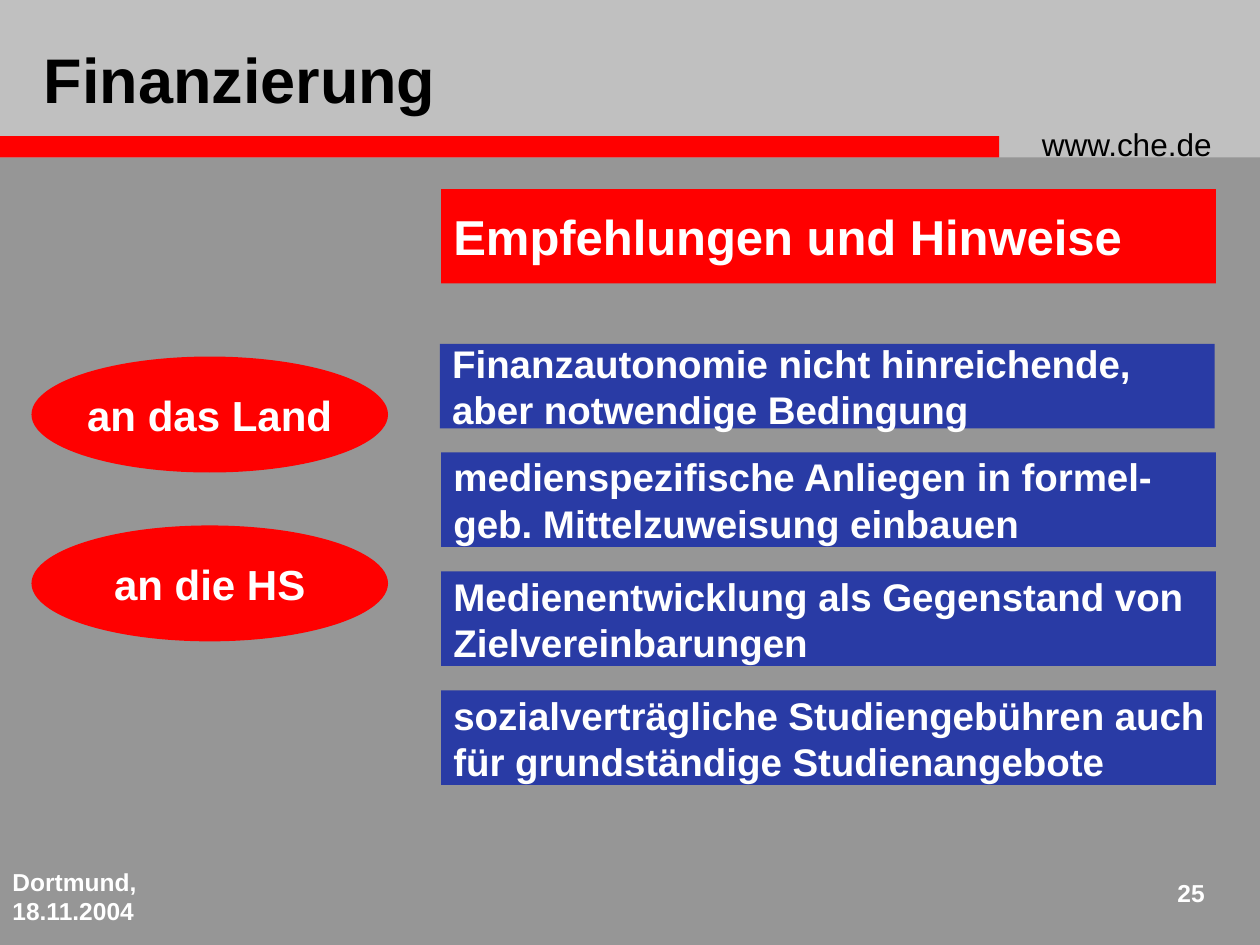
"""Build the slide on funding recommendations to the state and the universities."""
from pptx import Presentation
from pptx.dml.color import RGBColor
from pptx.enum.shapes import MSO_SHAPE
from pptx.enum.text import MSO_ANCHOR, PP_ALIGN
from pptx.util import Inches, Pt

COLORS = {"background": "969696", "band": "C0C0C0", "red": "FF0000",
          "blue": "293BA5", "white": "FFFFFF", "black": "000000"}

HEADING = "Empfehlungen und Hinweise"
ADDRESSEES = ["an das Land", "an die HS"]
RECOMMENDATIONS = [
    ("Finanzautonomie nicht hinreichende,", "aber notwendige Bedingung"),
    ("medienspezifische Anliegen in formel-", "geb. Mittelzuweisung einbauen"),
    ("Medienentwicklung als Gegenstand von", "Zielvereinbarungen"),
    ("sozialverträgliche Studiengebühren auch", "für grundständige Studienangebote"),
]
LABELS = [
    ("www.che.de", (8.17, 0.94, 1.75, 0.4), {"size": 18, "color": "black", "bold": False}),
    ("Finanzierung", (0.25, 0.25, 5.84, 0.75),
     {"size": 36, "color": "black", "anchor": MSO_ANCHOR.MIDDLE}),
    ("Dortmund, 18.11.2004", (0, 6.83, 2.08, 0.5), {"size": 14}),
    ("25", (9.08, 6.92, 0.58, 0.42), {"size": 14, "align": PP_ALIGN.RIGHT}),
]

BOX_LEFT, BOX_WIDTH, BOX_HEIGHT = 3.5, 6.15, 0.75
SECOND_TOP, ROW_STEP = 3.59, 0.945
OVAL_TOP, OVAL_STEP = 2.83, 1.34


def rgb(name):
    return RGBColor.from_string(COLORS[name])


def write(sp, lines, size, color="white", bold=True, align=PP_ALIGN.LEFT,
          anchor=MSO_ANCHOR.TOP, wrap=True):
    tf = sp.text_frame
    for name, value in {"word_wrap": wrap, "vertical_anchor": anchor}.items():
        setattr(tf, name, value)
    for i, line in enumerate(lines):
        p = tf.paragraphs[0] if i == 0 else tf.add_paragraph()
        p.alignment = align
        r = p.add_run()
        r.text = line
        for name, value in {"name": "Arial", "size": Pt(size), "bold": bold}.items():
            setattr(r.font, name, value)
        r.font.color.rgb = rgb(color)


def add_block(s, kind, box, fill, lines=(), size=22, align=PP_ALIGN.LEFT):
    sp = s.shapes.add_shape(kind, *map(Inches, box))
    sp.shadow.inherit = False
    sp.fill.solid()
    sp.fill.fore_color.rgb = rgb(fill)
    sp.line.fill.background()
    if lines:
        write(sp, lines, size, align=align, anchor=MSO_ANCHOR.MIDDLE, wrap=False)


def main():
    prs = Presentation()
    prs.slide_width, prs.slide_height = Inches(10), Inches(7.5)
    s = prs.slides.add_slide(prs.slide_layouts[6])
    s.background.fill.solid()
    s.background.fill.fore_color.rgb = rgb("background")

    add_block(s, MSO_SHAPE.RECTANGLE, (0, 0, 10, 1.25), "band")
    add_block(s, MSO_SHAPE.RECTANGLE, (0, 1.08, 7.93, 0.17), "red")
    for text, box, style in LABELS:
        write(s.shapes.add_textbox(*map(Inches, box)), [text], **style)

    add_block(s, MSO_SHAPE.RECTANGLE, (BOX_LEFT, 1.5, BOX_WIDTH, BOX_HEIGHT),
              "red", [HEADING], 28)
    boxes = [(3.49, 2.73, BOX_WIDTH, 0.67)]
    boxes += [(BOX_LEFT, SECOND_TOP + i * ROW_STEP, BOX_WIDTH, BOX_HEIGHT)
              for i in range(len(RECOMMENDATIONS) - 1)]
    for box, lines in zip(boxes, RECOMMENDATIONS):
        add_block(s, MSO_SHAPE.RECTANGLE, box, "blue", lines)
    for i, addressee in enumerate(ADDRESSEES):
        add_block(s, MSO_SHAPE.OVAL, (0.25, OVAL_TOP + i * OVAL_STEP, 2.83, 0.92),
                  "red", [addressee], 24, PP_ALIGN.CENTER)
    prs.save("out.pptx")


if __name__ == "__main__":
    main()
